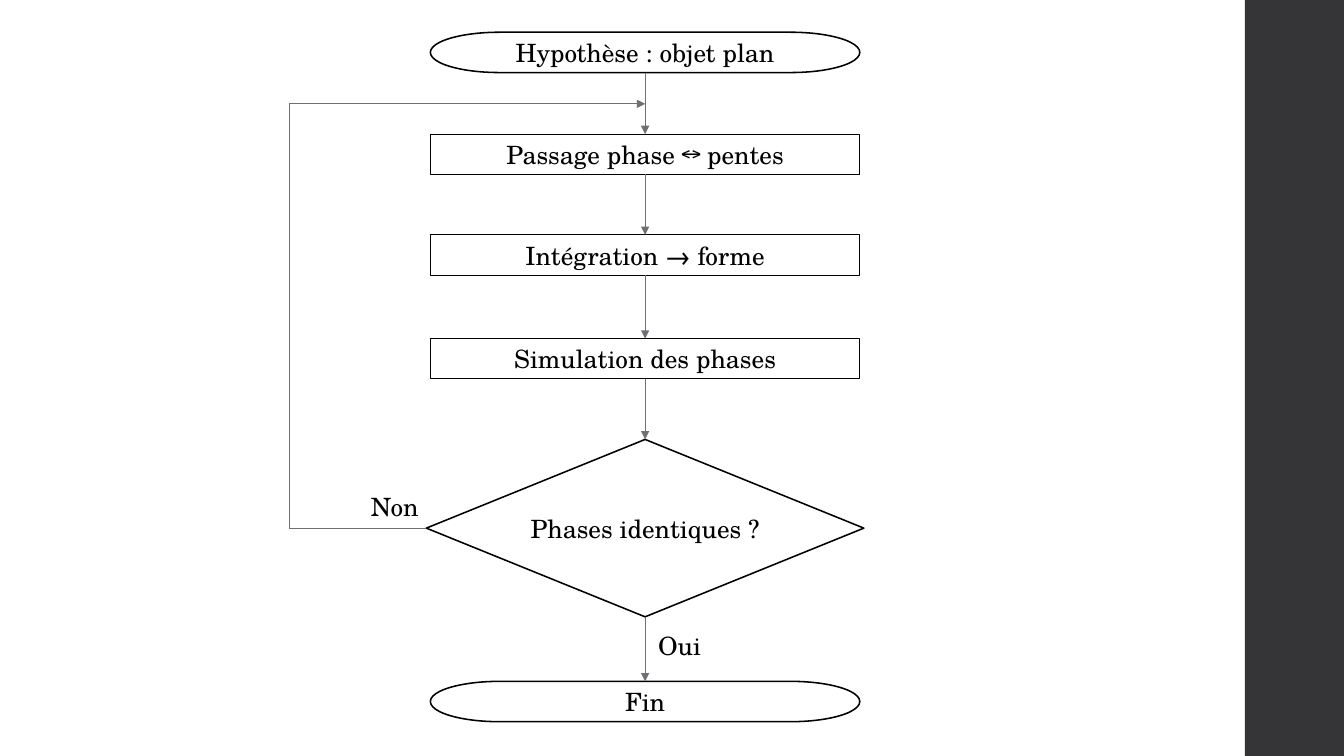
"""Build a flowchart slide of an iterative phase retrieval loop."""
from dataclasses import dataclass
from itertools import pairwise

from lxml import etree
from pptx import Presentation
from pptx.dml.color import RGBColor
from pptx.enum.shapes import MSO_CONNECTOR, MSO_SHAPE
from pptx.enum.text import MSO_ANCHOR, PP_ALIGN
from pptx.oxml.ns import qn
from pptx.shapes.autoshape import Shape
from pptx.shapes.connector import Connector
from pptx.slide import Slide
from pptx.text.text import TextFrame
from pptx.util import Inches, Pt

RECTANGLE = MSO_SHAPE.RECTANGLE
TERMINATOR = MSO_SHAPE.FLOWCHART_TERMINATOR
DECISION = MSO_SHAPE.FLOWCHART_DECISION
STRAIGHT = MSO_CONNECTOR.STRAIGHT
MIDDLE = MSO_ANCHOR.MIDDLE
CENTER = PP_ALIGN.CENTER
LEFT = PP_ALIGN.LEFT
TOP_SIDE, LEFT_SIDE, BOTTOM_SIDE = 0, 1, 2

CELL = Inches(0.1)
SLIDE_COLUMNS, SLIDE_ROWS = 133.33, 75
AXIS = 64
STEP_COLUMNS, STEP_ROWS = 42.6, 4
BAND_LEFT, BAND_COLUMNS = 123.5, 10
LOOP_COLUMN, LOOP_ROW = 28.7, 10.3


@dataclass(frozen=True)
class Theme:
    """Colours, font and sizes of the slide."""
    ink: RGBColor = RGBColor(0x00, 0x00, 0x00)
    arrow: RGBColor = RGBColor(0x6F, 0x6F, 0x74)
    band: RGBColor = RGBColor(0x35, 0x35, 0x37)
    font: str = "TeX Gyre Schola"
    text_size: Pt = Pt(18)
    thin: Pt = Pt(0.75)
    thick: Pt = Pt(1.1)


@dataclass(frozen=True)
class Step:
    """One flowchart box centred on the axis, in grid cells."""
    text: str
    top: float
    kind: MSO_SHAPE = RECTANGLE
    columns: float = STEP_COLUMNS
    rows: float = STEP_ROWS


@dataclass(frozen=True)
class Label:
    """A branch label, in grid cells."""
    text: str
    left: float
    top: float
    columns: float


THEME = Theme()
STEPS = (
    Step("Hypothèse : objet plan", 3.2, TERMINATOR),
    Step("Passage phase ↔ pentes", 13.3),
    Step("Intégration → forme", 23.3),
    Step("Simulation des phases", 33.6),
    Step("Phases identiques ?", 43.6, DECISION, 43.4, 17.6),
    Step("Fin", 67.6, TERMINATOR),
)
LABELS = (Label("Non", 35.8, 48.2, 6.9), Label("Oui", 64.3, 62, 6.3))


def cells(count: float) -> int:
    """Turn grid cells into a length."""
    return round(count * CELL)


def write(frame: TextFrame, text: str, alignment: PP_ALIGN) -> None:
    """Write one line of text into a frame."""
    frame.word_wrap = False
    frame.vertical_anchor = MIDDLE
    para = frame.paragraphs[0]
    para.alignment = alignment
    span = para.add_run()
    span.text = text
    span.font.name = THEME.font
    span.font.size = THEME.text_size
    span.font.color.rgb = THEME.ink


def draw_band(page: Slide) -> None:
    """Draw the dark band on the right edge."""
    band = page.shapes.add_shape(
        RECTANGLE, cells(BAND_LEFT), 0, cells(BAND_COLUMNS), cells(SLIDE_ROWS))
    band.shadow.inherit = False
    band.fill.solid()
    band.fill.fore_color.rgb = THEME.band
    band.line.fill.background()


def draw_step(page: Slide, step: Step) -> Shape:
    """Draw one flowchart box with its text."""
    box = page.shapes.add_shape(
        step.kind, cells(AXIS - step.columns / 2), cells(step.top),
        cells(step.columns), cells(step.rows))
    box.shadow.inherit = False
    box.fill.background()
    box.line.color.rgb = THEME.ink
    box.line.width = THEME.thin if step.kind == RECTANGLE else THEME.thick
    write(box.text_frame, step.text, CENTER)
    return box


def draw_label(page: Slide, label: Label) -> None:
    """Draw one branch label."""
    box = page.shapes.add_textbox(
        cells(label.left), cells(label.top), cells(label.columns), cells(STEP_ROWS))
    write(box.text_frame, label.text, LEFT)


def draw_line(page: Slide, start: tuple[float, float], end: tuple[float, float],
              arrow: bool) -> Connector:
    """Draw a straight line between two grid points."""
    line = page.shapes.add_connector(
        STRAIGHT, *(cells(value) for value in (*start, *end)))
    line.line.color.rgb = THEME.arrow
    line.line.width = THEME.thin
    if arrow:
        etree.SubElement(line.line._get_or_add_ln(), qn("a:tailEnd"), type="triangle")
    etree.SubElement(line._element.spPr, qn("a:effectLst"))
    return line


def draw_flow(page: Slide, boxes: list[Shape]) -> None:
    """Join each box to the next one down the axis."""
    for (above, upper), (below, lower) in pairwise(zip(STEPS, boxes)):
        line = draw_line(page, (AXIS, above.top + above.rows), (AXIS, below.top), True)
        line.begin_connect(upper, BOTTOM_SIDE)
        line.end_connect(lower, TOP_SIDE)


def draw_loop(page: Slide, step: Step, box: Shape) -> None:
    """Lead the decision back up to the start of the cycle."""
    middle = step.top + step.rows / 2
    exit_line = draw_line(
        page, (AXIS - step.columns / 2, middle), (LOOP_COLUMN, middle), False)
    exit_line.begin_connect(box, LEFT_SIDE)
    draw_line(page, (LOOP_COLUMN, middle), (LOOP_COLUMN, LOOP_ROW), False)
    draw_line(page, (LOOP_COLUMN, LOOP_ROW), (AXIS, LOOP_ROW), True)


def main() -> None:
    """Build and save the deck."""
    deck = Presentation()
    deck.slide_width, deck.slide_height = cells(SLIDE_COLUMNS), cells(SLIDE_ROWS)
    page = deck.slides.add_slide(deck.slide_layouts.get_by_name("Blank"))
    draw_band(page)
    boxes = [draw_step(page, step) for step in STEPS]
    draw_flow(page, boxes)
    for step, box in zip(STEPS, boxes):
        if step.kind == DECISION:
            draw_loop(page, step, box)
    for label in LABELS:
        draw_label(page, label)
    deck.save("out.pptx")


if __name__ == "__main__":
    main()
